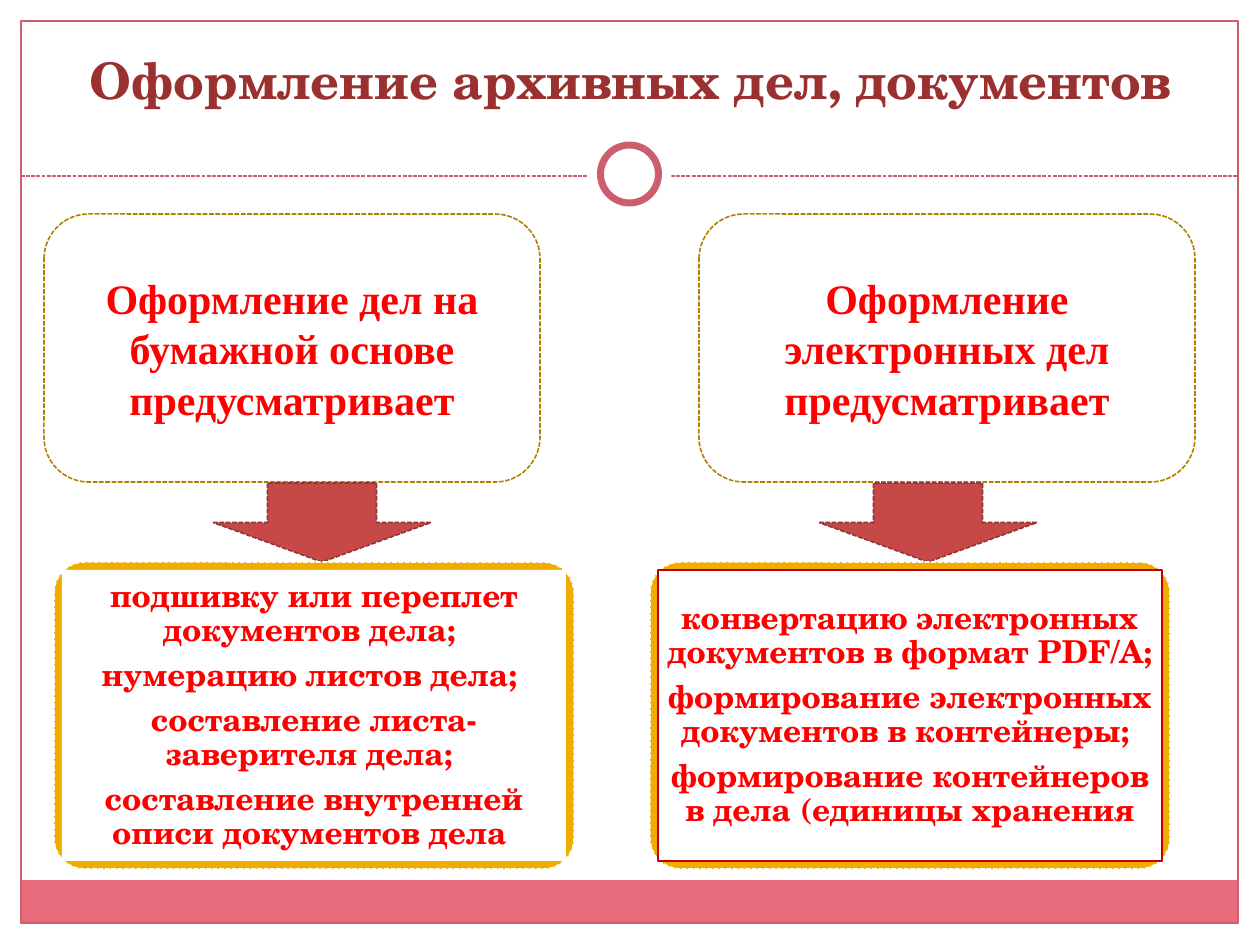
from dataclasses import dataclass

from lxml import etree
from pptx import Presentation
from pptx.dml.color import RGBColor
from pptx.enum.dml import MSO_LINE
from pptx.enum.shapes import MSO_CONNECTOR, MSO_SHAPE
from pptx.enum.text import MSO_ANCHOR, PP_ALIGN
from pptx.oxml.ns import qn
from pptx.util import Emu, Pt

DASH = MSO_LINE.SQUARE_DOT
RECT, ROUND = MSO_SHAPE.RECTANGLE, MSO_SHAPE.ROUNDED_RECTANGLE
OVAL, ARROW = MSO_SHAPE.OVAL, MSO_SHAPE.DOWN_ARROW
STRAIGHT = MSO_CONNECTOR.STRAIGHT
CENTER = PP_ALIGN.CENTER
MIDDLE, BOTTOM = MSO_ANCHOR.MIDDLE, MSO_ANCHOR.BOTTOM


@dataclass(frozen=True)
class Theme:
    """Colours, fonts and type sizes of the slide."""
    white: str = "FFFFFF"
    band: str = "E66C7D"
    rose: str = "CB5F6E"
    title: str = "9A3130"
    text: str = "FF0000"
    gold: str = "F0AD00"
    ochre: str = "B28000"
    arrow: str = "C64847"
    edge: str = "923535"
    rim: str = "C00000"
    serif: str = "TeX Gyre Schola"
    roman: str = "Times New Roman"
    large: float = 28.8
    mid: float = 24
    small: float = 18
    hair: float = 0.75
    thin: float = 0.9
    ring: float = 4


THEME = Theme()


def px(num):
    """Turn pixels into EMU."""
    return Emu(round(num * 914400 / 126))


def rgb(code):
    """Turn a hex code into a colour."""
    return RGBColor.from_string(code)


def stroke(line, color, width, dash=None):
    """Set the colour, width and dash of a line."""
    line.color.rgb = rgb(color)
    line.width = Pt(width)
    if dash:
        line.dash_style = dash


def shape(slide, kind, box, fill=None, line=None, width=THEME.thin, dash=None):
    """Add a flat preset shape in a pixel box."""
    item = slide.shapes.add_shape(kind, *map(px, box))
    item.shadow.inherit = False
    if fill:
        item.fill.solid()
        item.fill.fore_color.rgb = rgb(fill)
    else:
        item.fill.background()
    if line:
        stroke(item.line, line, width, dash)
    else:
        item.line.fill.background()
    return item


def write(item, texts, font, size, color, anchor=MIDDLE, gap=None):
    """Write centred bold paragraphs, set tighter when a gap is given."""
    frame = item.text_frame
    frame.word_wrap = True
    frame.vertical_anchor = anchor
    for i, text in enumerate(texts):
        para = frame.add_paragraph() if i else frame.paragraphs[0]
        para.text = text
        para.alignment = CENTER
        para.font.name, para.font.size = font, Pt(size)
        para.font.bold = True
        para.font.color.rgb = rgb(color)
        if gap:
            para.line_spacing = 0.9
            para.space_after = Pt(gap)


def border(slide, box):
    """Draw the band, the frame, the dashed rule and the ring."""
    x, y, w, h = box
    foot = 43
    shape(slide, RECT, (x, y + h - foot, w, foot), THEME.band)
    shape(slide, RECT, box, None, THEME.rose, THEME.hair)
    rule = y + 155
    line = slide.shapes.add_connector(
        STRAIGHT, px(x), px(rule), px(x + w), px(rule))
    stroke(line.line, THEME.rose, THEME.hair, DASH)
    props = line.element.find(qn("p:spPr"))
    etree.SubElement(props, qn("a:effectLst"))
    mid = x + w / 2
    for size, color in ((84, None), (58, THEME.rose)):
        area = (mid - size / 2, rule - 2 - size / 2, size, size)
        shape(slide, OVAL, area, THEME.white, color, THEME.ring)


def title(slide, box, text):
    """Write the slide title at the foot of its box."""
    item = slide.shapes.add_textbox(*map(px, box))
    write(item, [text], THEME.serif, THEME.large, THEME.title, BOTTOM)


def column(slide, box, head, tip, panel, topic, items, rim=None):
    """Draw a topic, an arrow and a list, at offsets from the box."""
    x, y, w, h = box
    top = shape(slide, ROUND, (x + head, y, 496, 268),
                THEME.white, THEME.ochre, dash=DASH)
    write(top, [topic], THEME.roman, THEME.mid, THEME.text)
    shape(slide, ARROW, (x + tip, y + 269, 218, 79),
          THEME.arrow, THEME.edge, dash=DASH)
    tall, pad = 307, 8
    left, low = x + panel, y + h - tall
    back = shape(slide, ROUND, (left, low, w, tall),
                 THEME.gold, THEME.white, dash=DASH)
    back.adjustments[0] = 0.1
    area = (left + pad, low + pad, w - 2 * pad, tall - 2 * pad)
    card = shape(slide, RECT, area, THEME.white, rim, THEME.hair)
    frame = card.text_frame
    frame.margin_left = frame.margin_right = px(pad)
    frame.margin_top = frame.margin_bottom = px(pad)
    write(card, items, THEME.serif, THEME.small, THEME.text, gap=6.3)


def main():
    """Build and save the slide."""
    deck = Presentation()
    deck.slide_width, deck.slide_height = px(1260), px(945)
    slide = deck.slides.add_slide(deck.slide_layouts[6])
    border(slide, (21, 21, 1217, 902))
    title(slide, (64, 26, 1134, 90), "Оформление архивных дел, документов")
    column(slide, (44, 214, 520, 655), 0, 169, 10,
           "Оформление дел на бумажной основе предусматривает",
           ["подшивку или переплет документов дела; ",
            "нумерацию листов дела; ",
            "составление листа-заверителя дела; ",
            "составление внутренней описи документов дела "])
    column(slide, (650, 214, 520, 655), 49, 169, 0,
           "Оформление электронных дел предусматривает",
           ["конвертацию электронных документов в формат PDF/А; ",
            "формирование электронных документов в контейнеры; ",
            "формирование контейнеров в дела (единицы хранения"],
           THEME.rim)
    deck.save("out.pptx")


if __name__ == "__main__":
    main()
